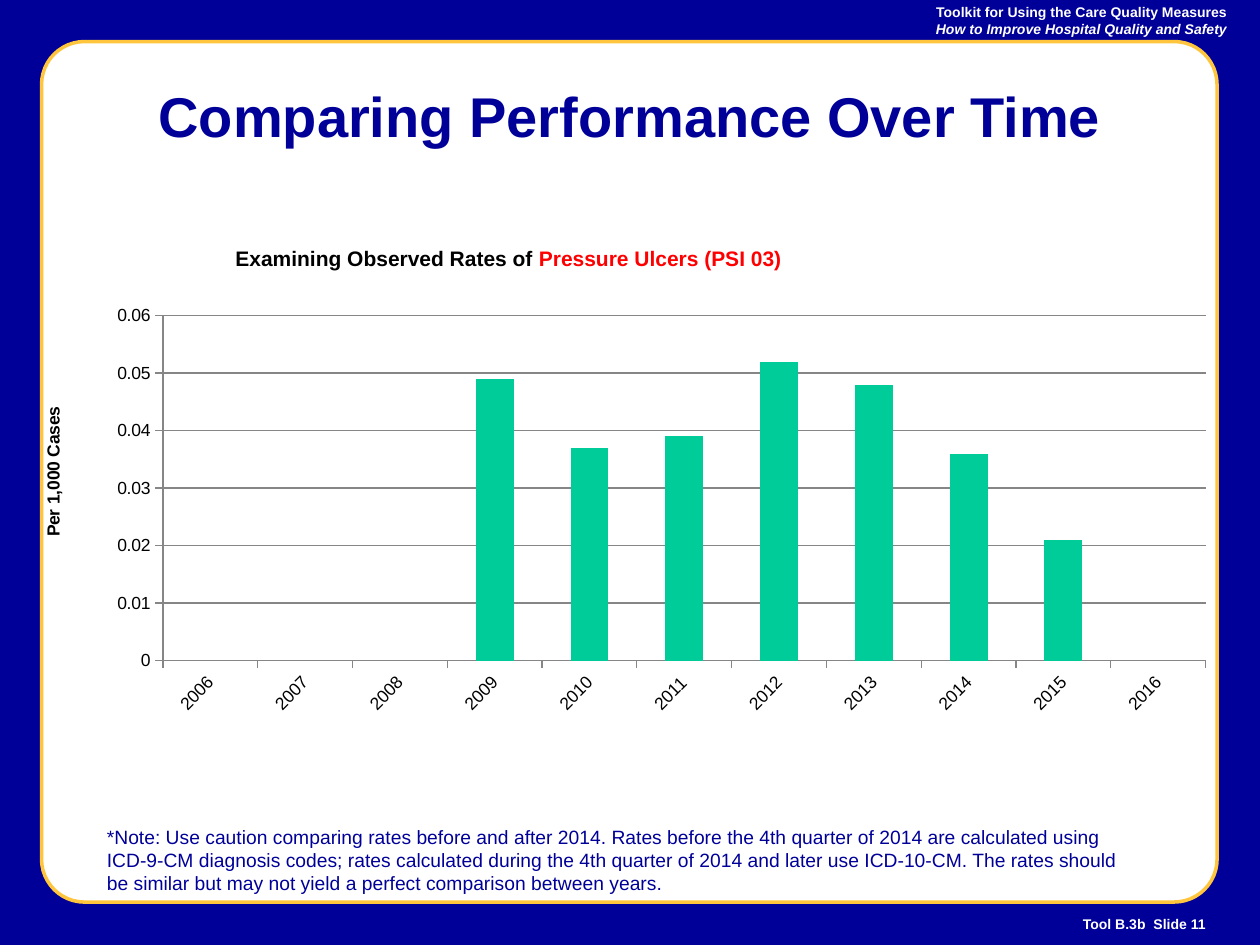
from pptx import Presentation
from pptx.chart.data import CategoryChartData
from pptx.dml.color import RGBColor
from pptx.enum.chart import XL_CHART_TYPE, XL_TICK_MARK
from pptx.enum.shapes import MSO_SHAPE
from pptx.enum.text import MSO_ANCHOR, PP_ALIGN
from pptx.oxml import parse_xml
from pptx.oxml.ns import nsdecls, qn
from pptx.util import Inches, Pt

NAVY, GOLD, WHITE, GRAY = "000099", "FFC53D", "FFFFFF", "868686"
RATES = {
    "2006": None, "2007": None, "2008": None, "2009": 0.049,
    "2010": 0.037, "2011": 0.039, "2012": 0.052, "2013": 0.048,
    "2014": 0.036, "2015": 0.021, "2016": None,
}


def paint(target, color):
    target.solid()
    target.fore_color.rgb = RGBColor.from_string(color)


def style(font, size, color, bold=False, italic=False):
    font.name, font.size = "Arial", Pt(size)
    font.bold, font.italic = bold, italic
    font.color.rgb = RGBColor.from_string(color)


def add_run(para, text, *look):
    run = para.add_run()
    run.text = text
    style(run.font, *look)


def add_panel(slide, kind, box, color):
    panel = slide.shapes.add_shape(kind, *map(Inches, box))
    panel.shadow.inherit = False
    paint(panel.fill, color)
    panel.line.fill.background()
    return panel


def add_frame(slide, box):
    add_panel(slide, MSO_SHAPE.RECTANGLE, (0, 0, 10, 7.5), NAVY)
    card = add_panel(slide, MSO_SHAPE.ROUNDED_RECTANGLE, box, WHITE)
    card.adjustments[0] = 0.05
    paint(card.line.fill, GOLD)
    card.line.width = Pt(2)


def add_text(slide, box, lines, align, anchor):
    frame = slide.shapes.add_textbox(*map(Inches, box)).text_frame
    frame.word_wrap = True
    frame.vertical_anchor = anchor
    for i, (text, *look) in enumerate(lines):
        para = frame.add_paragraph() if i else frame.paragraphs[0]
        para.alignment = align
        add_run(para, text, *look)


def add_title(slide, box, text):
    title = slide.shapes.title
    title.left, title.top, title.width, title.height = map(Inches, box)
    frame = title.text_frame
    frame.vertical_anchor = MSO_ANCHOR.MIDDLE
    para = frame.paragraphs[0]
    para.alignment = PP_ALIGN.CENTER
    add_run(para, text, 32, NAVY, True)
    slide.shapes._spTree.append(title._element)


def make_layout(x, y, w=None, h=None):
    size = ""
    target = ""
    if w:
        target = '<c:layoutTarget val="inner"/>'
        size = f'<c:w val="{w}"/><c:h val="{h}"/>'
    return parse_xml(
        f'<c:layout {nsdecls("c")}><c:manualLayout>{target}'
        '<c:xMode val="edge"/><c:yMode val="edge"/>'
        f'<c:x val="{x}"/><c:y val="{y}"/>{size}'
        "</c:manualLayout></c:layout>"
    )


def clear_layout(node):
    for old in node.findall(qn("c:layout")):
        node.remove(old)


def set_label(title, runs, x, y):
    para = title.text_frame.paragraphs[0]
    for text, *look in runs:
        add_run(para, text, *look)
    node = title._element
    clear_layout(node)
    node.find(qn("c:tx")).addnext(make_layout(x, y))


def format_axis(axis):
    axis.major_tick_mark = XL_TICK_MARK.OUTSIDE
    axis.minor_tick_mark = XL_TICK_MARK.NONE
    paint(axis.format.line.fill, GRAY)
    style(axis.tick_labels.font, 10, "000000")


def add_rates(slide, box):
    data = CategoryChartData()
    data.categories = list(RATES)
    data.add_series("Series 1", RATES.values())
    chart = slide.shapes.add_chart(
        XL_CHART_TYPE.COLUMN_CLUSTERED, *map(Inches, box), data
    ).chart
    style(chart.font, 10, "000000")
    chart.has_legend = False
    chart.has_title = True
    set_label(chart.chart_title, [
        ("Examining Observed Rates of ", 12, "000000", True),
        ("Pressure Ulcers (PSI 03)", 12, "FF0000", True),
    ], 0.17, 0.03)

    plot = chart.plots[0]
    plot.gap_width = 150
    plot.vary_by_categories = False
    paint(plot.series[0].format.fill, "00CC99")

    cats, vals = chart.category_axis, chart.value_axis
    format_axis(cats)
    format_axis(vals)
    body = cats.tick_labels._element.find(qn("c:txPr")).find(qn("a:bodyPr"))
    body.set("rot", "-2700000")
    body.set("vert", "horz")
    vals.minimum_scale, vals.maximum_scale = 0, 0.06
    vals.major_unit = 0.01
    vals.tick_labels.number_format = "General"
    vals.tick_labels.number_format_is_linked = False
    vals.has_major_gridlines = True
    paint(vals.major_gridlines.format.line.fill, GRAY)
    vals.has_title = True
    set_label(vals.axis_title, [("Per 1,000 Cases", 10, "000000", True)],
              0.01, 0.36)
    turn = vals.axis_title.text_frame._txBody.find(qn("a:bodyPr"))
    turn.set("rot", "-5400000")
    turn.set("vert", "horz")

    area = chart._chartSpace.chart.plotArea
    clear_layout(area)
    area.insert(0, make_layout(0.113, 0.181, 0.864, 0.702))


def main():
    deck = Presentation()
    deck.slide_width, deck.slide_height = Inches(10), Inches(7.5)
    slide = deck.slides.add_slide(deck.slide_layouts[5])
    add_frame(slide, (0.33, 0.33, 9.33, 6.83))
    add_text(slide, (0.17, 0, 9.67, 0.33), [
        ("Toolkit for Using the Care Quality Measures", 8, WHITE, True),
        ("How to Improve Hospital Quality and Safety", 8, WHITE, True, True),
    ], PP_ALIGN.RIGHT, MSO_ANCHOR.MIDDLE)
    add_text(slide, (0.17, 7.17, 9.5, 0.33), [
        ("Tool B.3b  Slide 11", 8, WHITE, True),
    ], PP_ALIGN.RIGHT, MSO_ANCHOR.MIDDLE)
    add_title(slide, (0.75, 0.5, 8.5, 0.83), "Comparing Performance Over Time")
    add_text(slide, (0.75, 6.5, 8.33, 0.66), [
        ("*Note: Use caution comparing rates before and after 2014. "
         "Rates before the 4th quarter of 2014 are calculated using "
         "ICD-9-CM diagnosis codes; rates calculated during the 4th quarter "
         "of 2014 and later use ICD-10-CM. The rates should be similar but "
         "may not yield a perfect comparison between years.", 11, NAVY),
    ], PP_ALIGN.LEFT, MSO_ANCHOR.TOP)
    add_rates(slide, (0.21, 1.8, 9.58, 3.9))
    deck.save("out.pptx")


if __name__ == "__main__":
    main()
